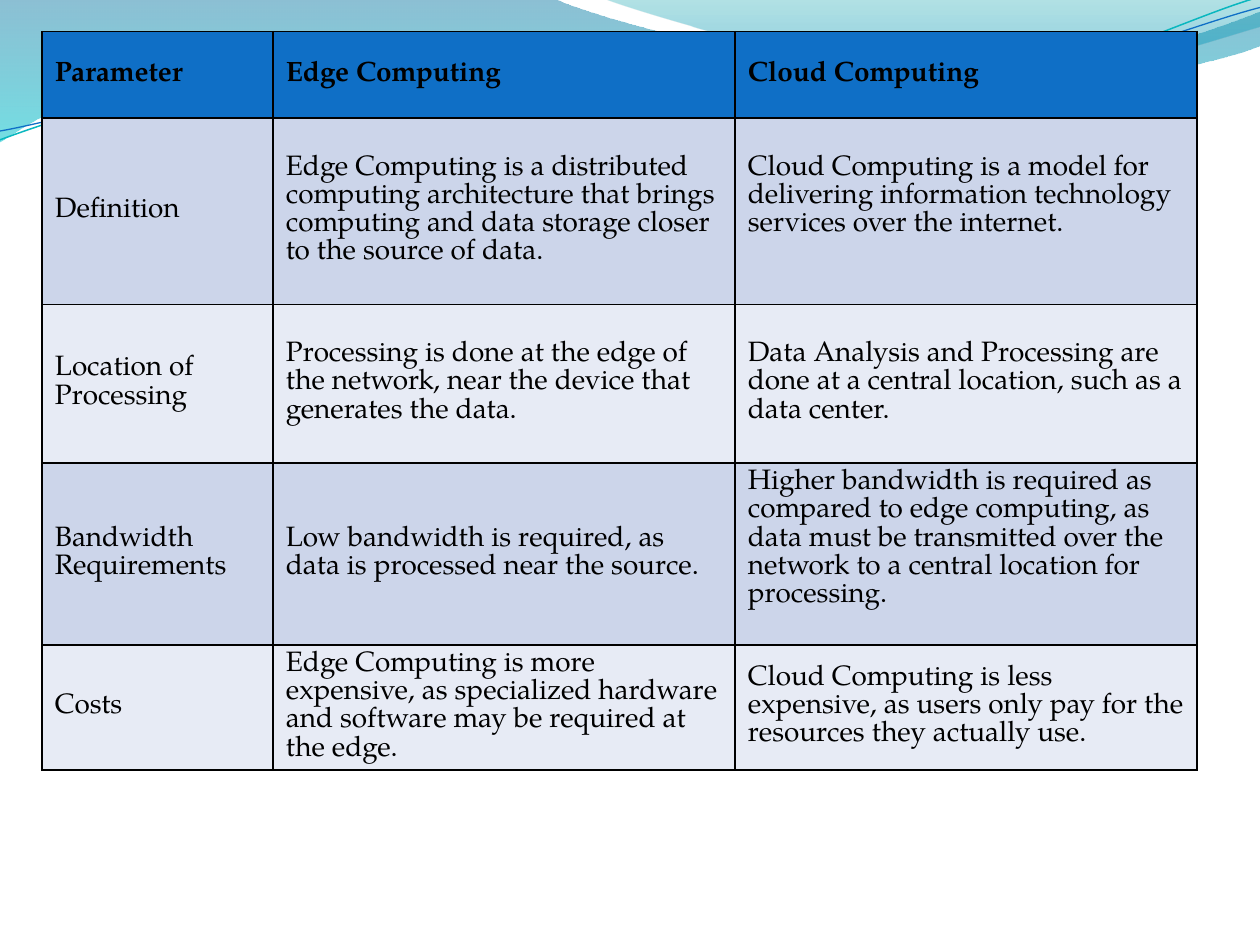
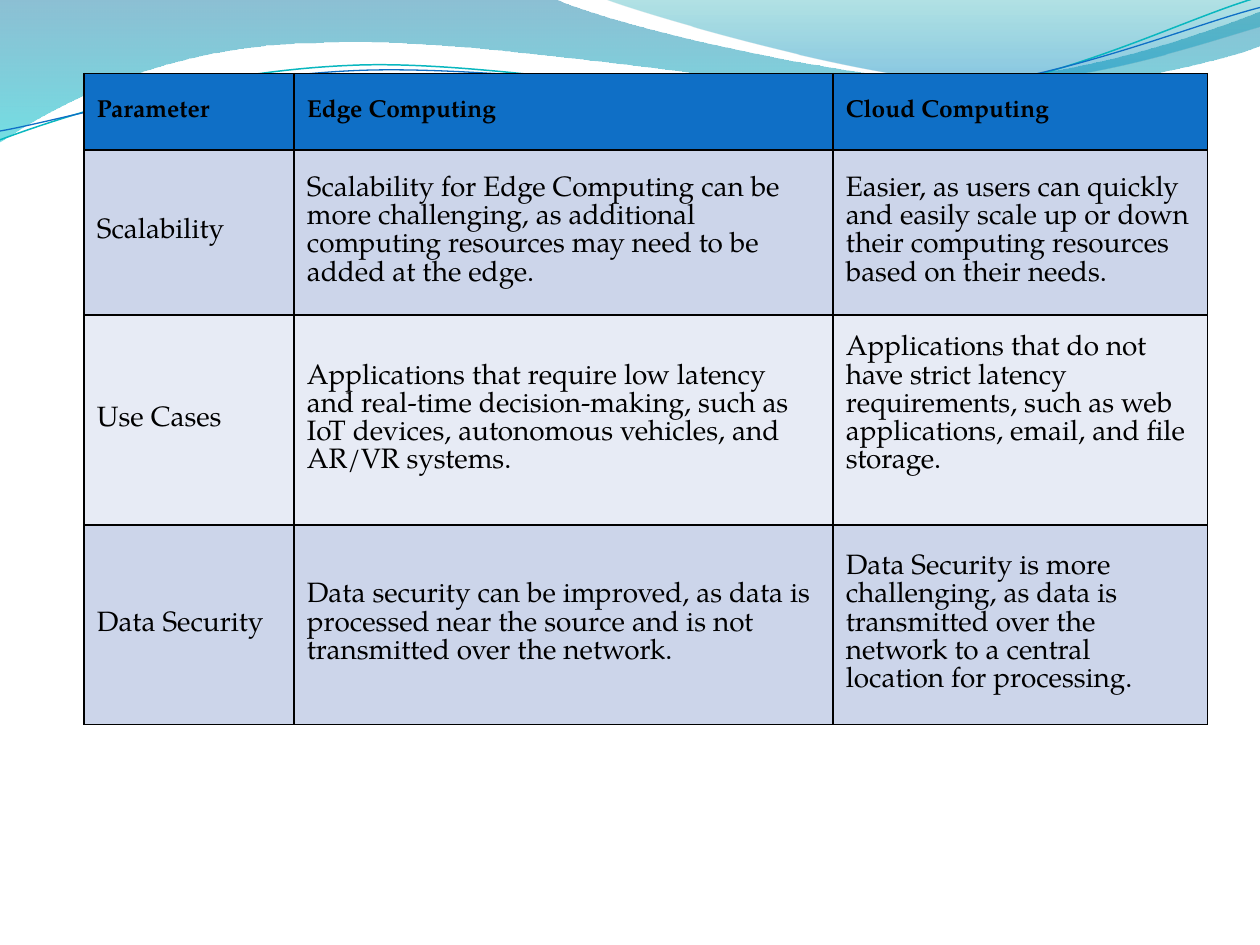
from itertools import product
from math import cos, radians, sin

from lxml import etree
from pptx import Presentation
from pptx import util as u
from pptx.dml.color import RGBColor
from pptx.enum import text
from pptx.oxml import ns

Pt = u.Pt
BLACK = RGBColor(0x00, 0x00, 0x00)
HEADER_BLUE = RGBColor(0x0F, 0x6F, 0xC6)
ROW_DARK = RGBColor(0xCC, 0xD5, 0xEA)
ROW_LIGHT = RGBColor(0xE7, 0xEB, 0xF5)
TEAL = RGBColor(0x09, 0xB7, 0xBF)
DEEP_BLUE = RGBColor(0x00, 0x74, 0xA0)
CYAN = RGBColor(0x00, 0xC4, 0xCD)
SEA_GREEN = RGBColor(0x00, 0xA0, 0xA8)
SKY_BLUE = RGBColor(0x00, 0x8A, 0xBF)

FONT = "TeX Gyre Pagella"
BODY_SIZE = 16
LEADING = 1.006
BORDER = 0.96
STRAND_TILT = 2.7

LEFT_WAVE = [
    [(0, 0)],
    [(316.8, -0.7)],
    [(342.7, 12.2), (478.1, 45.4), (545.8, 45.4)],
    [(614.2, 45.4), (689.8, 18.7), (720, 6.5)],
    [(720.7, 25.9)],
    [(708, 31.7), (626.4, 54.7), (537.1, 54)],
    [(447.8, 54), (275, 20.2), (185, 24.5)],
    [(92.9, 25.2), (33.1, 59.8), (-0.7, 81.4)],
    [(0, 0)],
]
RIGHT_WAVE = [
    [(344.9, -0.7)],
    [(366.5, 7.9), (491, 44.6), (553.7, 46.8)],
    [(616.3, 49.7), (691.9, 23), (720, 15.1)],
    [(720, 0)],
    [(344.9, -0.7)],
]
TEAL_STRAND = [
    [(0, 79.9)],
    [(34.6, 67), (113.8, 41), (199.4, 37.4)],
    [(284.4, 33.1), (427, 64.1), (513.4, 57.6)],
    [(599.8, 51.1), (675.4, 10.8), (718.6, -1.4)],
]
BLUE_STRAND = [
    [(0, 74.9)],
    [(33.8, 69.1), (118.1, 43.9), (203.8, 40.3)],
    [(290.2, 36.7), (429.8, 59.8), (516.2, 54)],
    [(601.9, 48.2), (677.5, 15.1), (720, 4.3)],
]

HEADINGS = ("Parameter", "Edge Computing", "Cloud Computing")
BASICS = [
    ("Definition",
     "Edge Computing is a distributed computing architecture that brings "
     "computing and data storage closer to the source of data.",
     "Cloud Computing is a model for delivering information technology "
     "services over the internet."),
    ("Location of Processing",
     "Processing is done at the edge of the network, near the device that "
     "generates the data.",
     "Data Analysis and Processing are done at a central location, such as a "
     "data center."),
    ("Bandwidth Requirements",
     "Low bandwidth is required, as data is processed near the source.",
     "Higher bandwidth is required as compared to edge computing, as data "
     "must be transmitted over the network to a central location for "
     "processing."),
    ("Costs",
     "Edge Computing is more expensive, as specialized hardware and software "
     "may be required at the edge.",
     "Cloud Computing is less expensive, as users only pay for the resources "
     "they actually use."),
]
OPERATIONS = [
    ("Scalability",
     "Scalability for Edge Computing can be more challenging, as additional "
     "computing resources may need to be added at the edge.",
     "Easier, as users can quickly and easily scale up or down their "
     "computing resources based on their needs."),
    ("Use Cases",
     "Applications that require low latency and real-time decision-making, "
     "such as IoT devices, autonomous vehicles, and AR/VR systems.",
     "Applications that do not have strict latency requirements, such as web "
     "applications, email, and file storage."),
    ("Data Security",
     "Data security can be improved, as data is processed near the source "
     "and is not transmitted over the network.",
     "Data Security is more challenging, as data is transmitted over the "
     "network to a central location for processing."),
]


def level(segments, centre):
    angle = radians(STRAND_TILT)
    cx, cy = centre
    return [[(cx + (x - cx) * cos(angle) - (y - cy) * sin(angle),
              cy + (x - cx) * sin(angle) + (y - cy) * cos(angle))
             for x, y in segment] for segment in segments]


def add_element(parent, tag, **attributes):
    return etree.SubElement(parent, ns.qn(tag), attributes)


class Deck:
    def __init__(self):
        self.presentation = Presentation()
        self.presentation.slide_width = Pt(720)
        self.presentation.slide_height = Pt(540)
        self.layout = self.presentation.slide_layouts[6]
        self.slide = None

    def new_slide(self):
        self.slide = self.presentation.slides.add_slide(self.layout)

    def share_backdrop(self):
        for placeholder in list(self.layout.placeholders):
            placeholder.element.getparent().remove(placeholder.element)
        self.wave(LEFT_WAVE, [(0, DEEP_BLUE, 45), (100, CYAN, 55)])
        self.wave(RIGHT_WAVE, [(0, SEA_GREEN, 30), (80, SKY_BLUE, 45)])
        self.strand(TEAL_STRAND, (359.3, 41.4), TEAL, 0.85)
        self.strand(BLUE_STRAND, (359.6, 42.5), HEADER_BLUE, 0.75)
        for shape in list(self.slide.shapes):
            self.layout.shapes.element.append(shape.element)

    def outline(self, segments):
        points = [(Pt(x), Pt(y)) for segment in segments for x, y in segment]
        builder = self.slide.shapes.build_freeform(*points[0])
        builder.add_line_segments(points[1:], close=False)
        shape = builder.convert_to_shape()
        shape.shadow.inherit = False
        lines = iter(list(shape.element.iter(ns.qn("a:lnTo"))))
        for segment in segments[1:]:
            first, *others = [next(lines) for _ in segment]
            if others:
                curve = etree.Element(ns.qn("a:cubicBezTo"))
                first.addprevious(curve)
                for line in (first, *others):
                    curve.append(line[0])
                    line.getparent().remove(line)
        return shape

    def wave(self, segments, stops):
        shape = self.outline(segments)
        outline = next(shape.element.iter(ns.qn("a:moveTo"))).getparent()
        add_element(outline, "a:close")
        shape.line.fill.background()
        shape.fill.gradient()
        gradient = shape.element.spPr.find(ns.qn("a:gradFill"))
        for child in list(gradient):
            gradient.remove(child)
        stop_list = add_element(gradient, "a:gsLst")
        for position, colour, opacity in stops:
            stop = add_element(stop_list, "a:gs", pos=str(position * 1000))
            tint = add_element(stop, "a:srgbClr", val=str(colour))
            add_element(tint, "a:alpha", val=str(opacity * 1000))
        add_element(gradient, "a:lin", ang="5400000", scaled="0")

    def strand(self, segments, centre, colour, width):
        shape = self.outline(level(segments, centre))
        shape.rotation = 360 - STRAND_TILT
        shape.fill.background()
        shape.line.color.rgb = colour
        shape.line.width = Pt(width)

    def border(self, cell):
        properties = cell._tc.get_or_add_tcPr()
        for index, side in enumerate("LRTB"):
            line = etree.Element(ns.qn(f"a:ln{side}"), w=str(Pt(BORDER)))
            fill = add_element(line, "a:solidFill")
            add_element(fill, "a:srgbClr", val=str(BLACK))
            properties.insert(index, line)

    def cell(self, cell, content, fill, size, bold, raised, right_inset):
        cell.vertical_anchor = text.MSO_ANCHOR.MIDDLE
        cell.margin_left = Pt(7.4)
        cell.margin_right = Pt(right_inset)
        cell.margin_top = Pt(3.6)
        cell.margin_bottom = Pt(3.6 + (size * LEADING if raised else 0))
        cell.fill.solid()
        cell.fill.fore_color.rgb = fill
        self.border(cell)
        paragraph = cell.text_frame.paragraphs[0]
        paragraph.line_spacing = Pt(size * LEADING)
        run = paragraph.add_run()
        run.text = content
        run.font.name = FONT
        run.font.size = Pt(size)
        run.font.bold = bold
        run.font.color.rgb = BLACK

    def comparison(self, left, top, widths, heights, topics, header_size,
                   raised_topics, right_inset):
        rows = [HEADINGS, *topics]
        table = self.slide.shapes.add_table(
            len(rows), len(widths), Pt(left), Pt(top),
            Pt(sum(widths)), Pt(sum(heights))).table
        table.first_row = table.horz_banding = False
        for column, width in zip(table.columns, widths):
            column.width = Pt(width)
        for row, height in zip(table.rows, heights):
            row.height = Pt(height)
        for r, c in product(range(len(rows)), range(len(widths))):
            header = r == 0
            band = ROW_DARK if r % 2 else ROW_LIGHT
            self.cell(table.cell(r, c), rows[r][c],
                      HEADER_BLUE if header else band,
                      header_size if header else BODY_SIZE, header,
                      c == 2 and rows[r][0] in raised_topics, right_inset)


def main():
    deck = Deck()
    deck.new_slide()
    deck.share_backdrop()
    deck.comparison(24, 18, (132, 264, 264), (49.5, 106.5, 90.5, 104, 71.6),
                    BASICS, 16, ("Definition", "Bandwidth Requirements"), 7.2)
    deck.new_slide()
    deck.comparison(48, 42, (120, 308, 214), (43.8, 94.2, 120, 114),
                    OPERATIONS, 14, ("Use Cases",), 9)
    deck.presentation.save("out.pptx")


if __name__ == "__main__":
    main()
